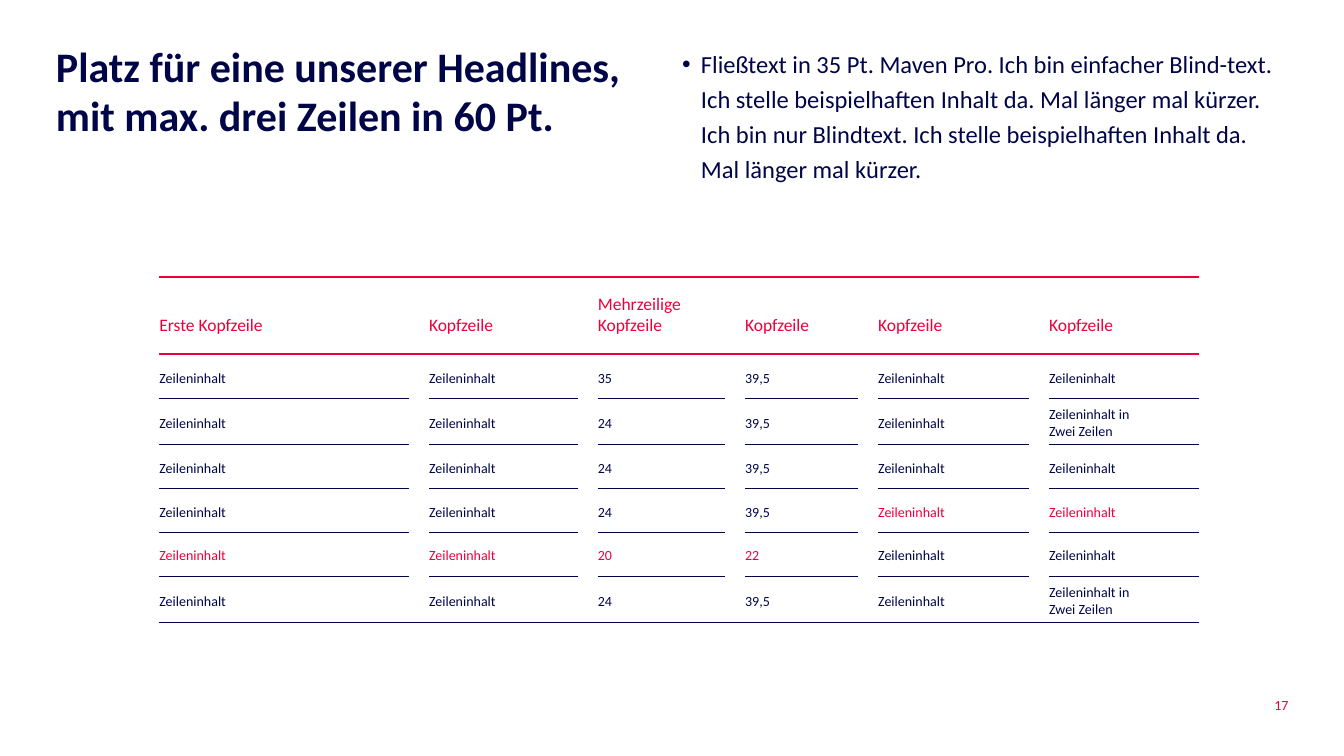
import dataclasses

import lxml.etree
import pptx
import pptx.dml.color
import pptx.enum.text
import pptx.oxml.ns
import pptx.util

PX = 9144  # EMU per px, 100 px to the inch


@dataclasses.dataclass(frozen=True)
class Theme:
    font: str = "Calibri"
    navy: str = "000548"
    red: str = "EB003C"
    title_size: int = 60
    body_size: int = 35
    header_size: int = 25
    cell_size: int = 20
    header_line: int = 3
    row_line: int = 1


theme = Theme()
Anchor = pptx.enum.text.MSO_ANCHOR


def write_text(text_frame, text, size, color, bold=False, line_spacing=None):
    text_frame.text = text
    text_frame.word_wrap = True
    for paragraph in text_frame.paragraphs:
        paragraph.space_before = pptx.util.Pt(0)
        if line_spacing:
            paragraph.line_spacing = line_spacing
        for run in paragraph.runs:
            run.font.name = theme.font
            run.font.size = pptx.util.Pt(size)
            run.font.bold = bold
            run.font.color.rgb = pptx.dml.color.RGBColor.from_string(color)


def add_border(cell, side, color=None, width=0):
    properties = cell._tc.get_or_add_tcPr()
    line = lxml.etree.SubElement(properties, pptx.oxml.ns.qn(f"a:ln{side}"))
    line.set("w", str(pptx.util.Pt(width)))
    if color is None:
        lxml.etree.SubElement(line, pptx.oxml.ns.qn("a:noFill"))
    else:
        fill = lxml.etree.SubElement(line, pptx.oxml.ns.qn("a:solidFill"))
        lxml.etree.SubElement(fill, pptx.oxml.ns.qn("a:srgbClr")).set("val", color)


presentation = pptx.Presentation()
presentation.slide_width = 2666 * PX
presentation.slide_height = 1500 * PX
slide = presentation.slides.add_slide(presentation.slide_layouts[1])

# Headline, body text and page number
title = slide.shapes.title
body = slide.placeholders[1]
page_number = slide.shapes.add_textbox(0, 0, PX, PX)
for shape, left, top, width, height in (
    (title, 111, 87, 1159, 300),
    (body, 1353, 87, 1202, 300),
    (page_number, 2438, 1381, 118, 47),
):
    shape.left, shape.top = left * PX, top * PX
    shape.width, shape.height = width * PX, height * PX
    frame = shape.text_frame
    frame.margin_left = frame.margin_top = frame.margin_right = frame.margin_bottom = 0
    frame.vertical_anchor = Anchor.TOP
    frame.auto_size = pptx.enum.text.MSO_AUTO_SIZE.NONE

body_properties = body.text_frame.paragraphs[0]._p.get_or_add_pPr()
body_properties.set("marL", "0")
body_properties.set("indent", "0")
lxml.etree.SubElement(body_properties, pptx.oxml.ns.qn("a:buNone"))

write_text(
    title.text_frame,
    "Platz für eine unserer Headlines, mit max. drei Zeilen in 60 Pt.",
    theme.title_size, theme.navy, bold=True, line_spacing=0.97,
)
title.text_frame.paragraphs[0].alignment = pptx.enum.text.PP_ALIGN.LEFT
write_text(
    body.text_frame,
    "Fließtext in 35 Pt. Maven Pro. Ich bin einfacher Blind-text. "
    "Ich stelle beispielhaften Inhalt da. Mal länger mal kürzer. "
    "Ich bin nur Blindtext. Ich stelle beispielhaften Inhalt da. "
    "Mal länger mal kürzer.",
    theme.body_size, theme.navy, line_spacing=1.19,
)
write_text(page_number.text_frame, "17", theme.cell_size, theme.red)
page_number.text_frame.paragraphs[0].alignment = pptx.enum.text.PP_ALIGN.RIGHT

# Table content: narrow empty columns separate the text columns
content = "Zeileninhalt"
two_lines = "Zeileninhalt in\nZwei Zeilen"
rows = [
    ["Erste Kopfzeile", "Kopfzeile", "Mehrzeilige\nKopfzeile"] + ["Kopfzeile"] * 3,
    [content, content, "35", "39,5", content, content],
    [content, content, "24", "39,5", content, two_lines],
    [content, content, "24", "39,5", content, content],
    [content, content, "24", "39,5", content, content],
    [content, content, "20", "22", content, content],
    [content, content, "24", "39,5", content, two_lines],
]
red_columns = {0: range(6), 4: range(4, 6), 5: range(4)}
text_widths = [495, 295, 252, 224, 299, 298]
gap_width, header_height, row_height = 40, 154, 87
column_count = 2 * len(text_widths) - 1
table_width = sum(text_widths) + gap_width * (len(text_widths) - 1)
table_height = header_height + row_height * (len(rows) - 1)

table = slide.shapes.add_table(
    len(rows), column_count, 316 * PX, 549 * PX, table_width * PX, table_height * PX
).table
table.first_row = False
table.horz_banding = False
for index, column in enumerate(table.columns):
    column.width = (gap_width if index % 2 else text_widths[index // 2]) * PX
for index, row in enumerate(table.rows):
    row.height = (row_height if index else header_height) * PX

header_border = (theme.red, theme.header_line)
row_border = (theme.navy, theme.row_line)
last_row = len(rows) - 1
for row_index, texts in enumerate(rows):
    is_header = row_index == 0
    for column_index in range(column_count):
        cell = table.cell(row_index, column_index)
        is_gap = column_index % 2 == 1

        # Borders run through the gaps only around the header and at the bottom
        inner_border = () if is_gap else row_border
        top = header_border if row_index <= 1 else inner_border
        if is_header:
            bottom = header_border
        else:
            bottom = row_border if row_index == last_row else inner_border
        for side, border in (("L", ()), ("R", ()), ("T", top), ("B", bottom)):
            add_border(cell, side, *border)
        cell.fill.background()
        if is_gap:
            continue

        # Cell text
        text_index = column_index // 2
        is_red = text_index in red_columns.get(row_index, ())
        cell.margin_left = cell.margin_right = 0
        cell.margin_top = (24 if is_header else 16) * PX
        cell.margin_bottom = (35 if is_header else 8) * PX
        cell.vertical_anchor = Anchor.BOTTOM if is_header else Anchor.MIDDLE
        write_text(
            cell.text_frame,
            texts[text_index],
            theme.header_size if is_header else theme.cell_size,
            theme.red if is_red else theme.navy,
        )

presentation.save("out.pptx")
